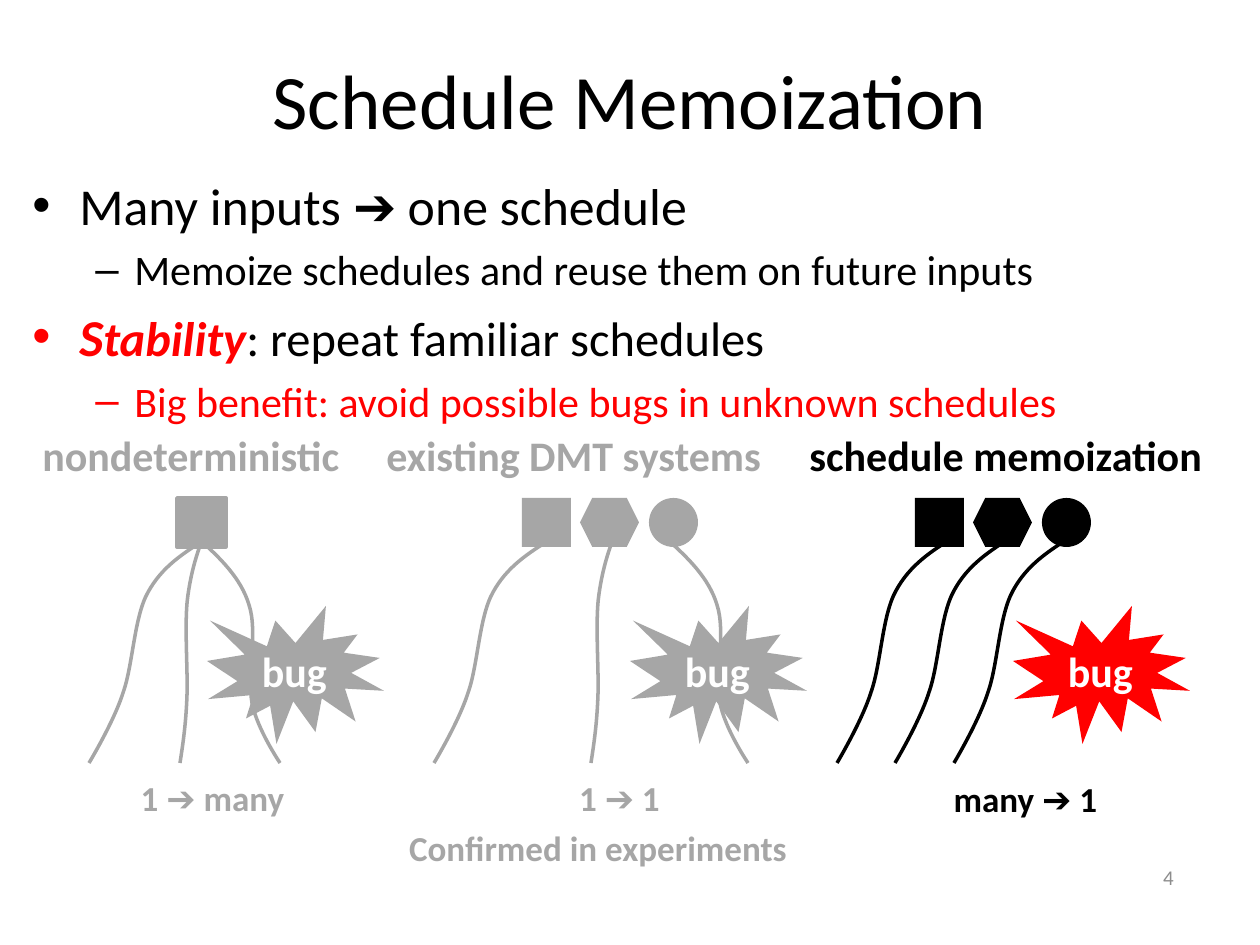
from lxml.etree import SubElement
from pptx import Presentation
from pptx.dml.color import RGBColor
from pptx.enum.shapes import MSO_SHAPE
from pptx.enum.text import MSO_ANCHOR, PP_ALIGN
from pptx.oxml.ns import qn
from pptx.util import Emu, Pt

BLACK, GRAY, RED, WHITE = "000000", "A6A6A6", "FF0000", "FFFFFF"
CENTER, RIGHT = PP_ALIGN.CENTER, PP_ALIGN.RIGHT

TITLE = "Schedule Memoization"
PAGE = "4"
BULLETS = [
    (0, [("Many inputs ➔ one schedule", 29.6, BLACK, False)]),
    (1, [("Memoize schedules and reuse them on future inputs", 24, BLACK, False)]),
    (0, [("S", 29.6, RED, True), ("tability", 27.7, RED, True),
         (": repeat familiar schedules", 27.7, BLACK, False)]),
    (1, [("Big benefit: avoid possible bugs in unknown schedules", 24, RED, False)]),
]
LEVELS = [
    {"char": "•", "margin": 47, "indent": -47, "before": 5.9},
    {"char": "–", "margin": 102, "indent": -39, "before": 4.8},
]
SYSTEMS = [
    {"heading": ("nondeterministic", 30, 325), "color": GRAY, "bug": (207, GRAY),
     "inputs": 177, "input_count": 1, "outline": GRAY,
     "strands": [("left", 206, 539), ("right", 199, 539), ("middle", 207, 528)],
     "captions": [("1 ➔ many", 104, 770, 217)]},
    {"heading": ("existing DMT systems", 374, 404), "color": GRAY, "bug": (630, GRAY),
     "inputs": 522, "input_count": 3, "outline": None,
     "strands": [("left", 551, 539), ("right", 667, 539), ("middle", 618, 527)],
     "captions": [("1 ➔ 1", 511, 770, 217), ("Confirmed in experiments ", 354, 820, 496)]},
    {"heading": ("schedule memoization", 797, 422), "color": BLACK, "bug": (1013, RED),
     "inputs": 915, "input_count": 3, "outline": None,
     "strands": [("left", 954, 537), ("left", 1012, 537), ("left", 1071, 537)],
     "captions": [("many ➔ 1", 917, 771, 217)]},
]
INPUT_KINDS = [(MSO_SHAPE.RECTANGLE, 0, 49), (MSO_SHAPE.HEXAGON, 58, 59), (MSO_SHAPE.OVAL, 127, 49)]
STRAND_END = 763
STRAND_CURVES = {
    "left": [(-22, 14), (-44, 28), (-58, 54), (-72, 79), (-73, 128), (-83, 156),
             (-92, 185), (-117, 227), (-117, 227)],
    "right": [(21, 19), (42, 39), (50, 66), (59, 93), (48, 137), (53, 164),
              (58, 190), (81, 224), (81, 224)],
    "middle": [(-8, 19), (-15, 39), (-19, 67), (-23, 94), (-19, 140), (-20, 168),
               (-21, 196), (-24, 216), (-27, 235)],
}


def px(length):
    return Emu(round(length * 914400 / 126))


def rgb(color):
    return RGBColor.from_string(color)


def add_run(paragraph, text, size, color, **formats):
    run = paragraph.add_run()
    run.text = text
    run.font.color.rgb = rgb(color)
    for name, value in {"name": "Calibri", "size": Pt(size), **formats}.items():
        setattr(run.font, name, value)


def add_label(slide, box, text, size, color, align=None, anchor=MSO_ANCHOR.TOP, wrap=True, bold=False):
    label = slide.shapes.add_textbox(*map(px, box))
    write(label, text, size, color, align, anchor, wrap, bold)


def write(shape, text, size, color, align, anchor, wrap=True, bold=True):
    for name, value in {"word_wrap": wrap, "vertical_anchor": anchor}.items():
        setattr(shape.text_frame, name, value)
    paragraph = shape.text_frame.paragraphs[0]
    paragraph.alignment = align
    add_run(paragraph, text, size, color, bold=bold)


def paint(shape, fill=None, line=None, width=2):
    shape.shadow.inherit = False
    for part, color in ((shape.fill, fill), (shape.line.fill, line)):
        if color:
            part.solid()
            part.fore_color.rgb = rgb(color)
        else:
            part.background()
    if line:
        shape.line.width = Pt(width)


def add_figure(slide, kind, box, **colors):
    figure = slide.shapes.add_shape(kind, *map(px, box))
    paint(figure, **colors)
    return figure


def add_strand(slide, curve, left, top, color):
    offsets = STRAND_CURVES[curve]
    stretch = (STRAND_END - top) / offsets[-1][1]
    builder = slide.shapes.build_freeform(px(left), px(top), scale=1.0)
    builder.add_line_segments([(px(left + x), px(top + y * stretch)) for x, y in offsets], close=False)
    strand = builder.convert_to_shape()
    paint(strand, line=color)
    outline = next(strand._element.iter(qn("a:path")))
    points = [segment[0] for segment in outline.findall(qn("a:lnTo"))]
    for segment in outline.findall(qn("a:lnTo")):
        outline.remove(segment)
    for first in range(0, len(points), 3):
        SubElement(outline, qn("a:cubicBezTo")).extend(points[first:first + 3])


def add_bullets(slide):
    frame = slide.shapes.add_textbox(*map(px, (20, 167, 1221, 256))).text_frame
    frame.word_wrap = True
    for index, (level, runs) in enumerate(BULLETS):
        paragraph = frame.add_paragraph() if index else frame.paragraphs[0]
        style = LEVELS[level]
        paragraph.level = level
        paragraph.space_before = Pt(style["before"])
        properties = paragraph._p.get_or_add_pPr()
        properties.set("marL", str(px(style["margin"])))
        properties.set("indent", str(px(style["indent"])))
        SubElement(properties, qn("a:buFont"), typeface="Arial")
        SubElement(properties, qn("a:buChar"), char=style["char"])
        for text, size, color, strong in runs:
            add_run(paragraph, text, size, color, bold=strong, italic=strong)


def add_system(slide, system):
    color = system["color"]
    heading, left, width = system["heading"]
    add_label(slide, (left, 423, width, 63), heading, 24, color, wrap=False, bold=True)
    for kind, offset, width in INPUT_KINDS[:system["input_count"]]:
        add_figure(slide, kind, (system["inputs"] + offset, 498, width, 49),
                   fill=color, line=system["outline"])
    for strand in system["strands"]:
        add_strand(slide, *strand, color)
    bug_left, bug_color = system["bug"]
    bug = add_figure(slide, MSO_SHAPE.EXPLOSION1, (bug_left, 606, 177, 138), fill=bug_color)
    write(bug, "bug", 24, WHITE, CENTER, MSO_ANCHOR.MIDDLE)
    for text, left, top, width in system["captions"]:
        caption = add_figure(slide, MSO_SHAPE.RECTANGLE, (left, top, width, 55), line=WHITE, width=0.75)
        write(caption, text, 20, color, CENTER, MSO_ANCHOR.TOP)


def main():
    deck = Presentation()
    deck.slide_width, deck.slide_height = px(1260), px(945)
    slide = deck.slides.add_slide(deck.slide_layouts[6])
    add_label(slide, (63, 20, 1134, 158), TITLE, 44, BLACK, CENTER, MSO_ANCHOR.MIDDLE)
    add_bullets(slide)
    add_label(slide, (892, 852, 294, 50), PAGE, 12, "8C8C8C", RIGHT, MSO_ANCHOR.MIDDLE)
    for system in SYSTEMS:
        add_system(slide, system)
    deck.save("out.pptx")


if __name__ == "__main__":
    main()
